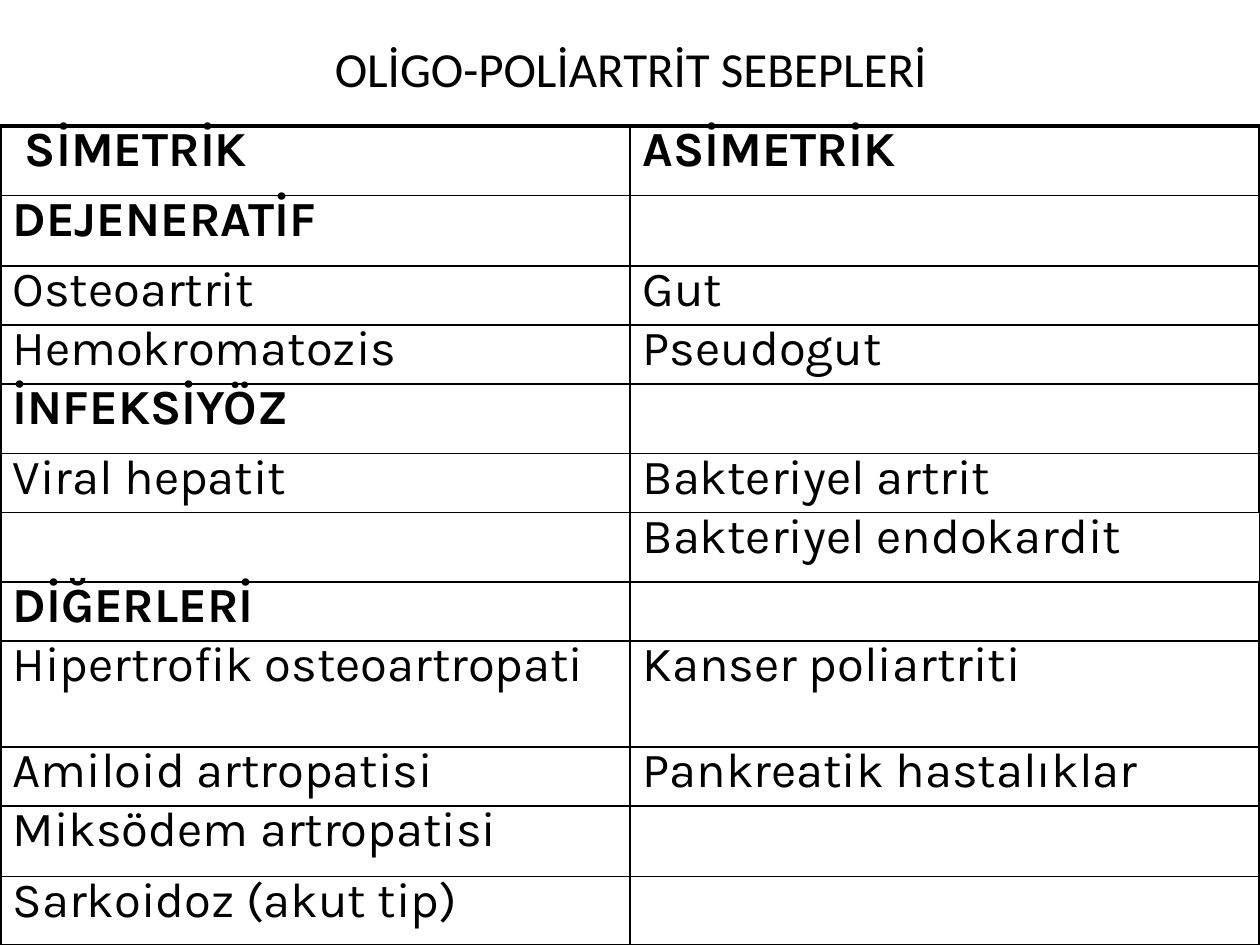
from dataclasses import dataclass

import lxml.etree
import pptx
import pptx.dml.color
import pptx.enum.text
import pptx.oxml.ns
import pptx.util

Inches = pptx.util.Inches


@dataclass(frozen=True)
class Theme:
    ink: str = "000000"
    paper: str = "FFFFFF"
    title_font: str = "Calibri"
    body_font: str = "Karla"
    text_size: float = 28
    thin: float = 1
    thick: float = 2.25
    line_spacing: float = 0.75
    space_before: str = "20000"


@dataclass(frozen=True)
class CauseRow:
    symmetric: str
    asymmetric: str
    height: float = 0.47
    heading: bool = False
    right_edge: float = Theme.thick


THEME = Theme()
ROWS = [
    CauseRow(" SİMETRİK", "ASİMETRİK", 0.55, heading=True),
    CauseRow("DEJENERATİF", "", 0.56, heading=True),
    CauseRow("Osteoartrit", "Gut"),
    CauseRow("Hemokromatozis", "Pseudogut"),
    CauseRow("İNFEKSİYÖZ", "", 0.55, heading=True),
    CauseRow("Viral hepatit", "Bakteriyel artrit"),
    CauseRow("", "Bakteriyel endokardit", 0.55, right_edge=THEME.thin),
    CauseRow("DİĞERLERİ", "", heading=True),
    CauseRow("Hipertrofik osteoartropati", "Kanser poliartriti", 0.84),
    CauseRow("Amiloid artropatisi", "Pankreatik hastalıklar"),
    CauseRow("Miksödem artropatisi", "", 0.56),
    CauseRow("Sarkoidoz (akut tip)", "", 0.55),
]


def color(value: str) -> pptx.dml.color.RGBColor:
    return pptx.dml.color.RGBColor.from_string(value)


def write_text(text_frame, text: str, *, font: str, bold: bool = False, align=None):
    paragraph = text_frame.paragraphs[0]
    paragraph.alignment = align
    run = paragraph.add_run()
    run.text = text
    run.font.name = font
    run.font.size = pptx.util.Pt(THEME.text_size)
    run.font.bold = bold
    run.font.color.rgb = color(THEME.ink)
    return paragraph


def set_percent_spacing(paragraph) -> None:
    paragraph.line_spacing = THEME.line_spacing
    paragraph.space_before = pptx.util.Pt(0)
    spacing = paragraph._p.pPr.find(pptx.oxml.ns.qn("a:spcBef"))
    spacing.remove(spacing[0])
    lxml.etree.SubElement(spacing, pptx.oxml.ns.qn("a:spcPct"), val=THEME.space_before)


def set_borders(cell, left: float, right: float, top: float, bottom: float) -> None:
    properties = cell._tc.get_or_add_tcPr()
    widths = {"a:lnL": left, "a:lnR": right, "a:lnT": top, "a:lnB": bottom}
    for position, (tag, width) in enumerate(widths.items()):
        line = properties.makeelement(
            pptx.oxml.ns.qn(tag), {"w": str(int(pptx.util.Pt(width)))}
        )
        fill = lxml.etree.SubElement(line, pptx.oxml.ns.qn("a:solidFill"))
        lxml.etree.SubElement(fill, pptx.oxml.ns.qn("a:srgbClr"), val=THEME.ink)
        properties.insert(position, line)


def format_title(slide, text: str) -> None:
    title = slide.shapes.title
    title.left, title.top = Inches(1.17), Inches(0.25)
    title.width, title.height = Inches(7.67), Inches(0.58)
    title.fill.solid()
    title.fill.fore_color.rgb = color(THEME.paper)
    title.text_frame.word_wrap = True
    title.text_frame.vertical_anchor = pptx.enum.text.MSO_ANCHOR.MIDDLE
    write_text(title.text_frame, text, font=THEME.title_font,
               align=pptx.enum.text.PP_ALIGN.CENTER)


def draw_table(slide, rows: list[CauseRow]) -> None:
    total_height = sum(row.height for row in rows)
    table = slide.shapes.add_table(
        len(rows), 2, 0, Inches(1), Inches(10), Inches(total_height)
    ).table
    table.first_row = False
    table.horz_banding = False
    for row_index, row in enumerate(rows):
        table.rows[row_index].height = Inches(row.height)
        top = THEME.thick if row_index == 0 else THEME.thin
        bottom = THEME.thick if row_index == len(rows) - 1 else THEME.thin
        sides = [(THEME.thick, THEME.thin), (THEME.thin, row.right_edge)]
        for column, text in enumerate((row.symmetric, row.asymmetric)):
            cell = table.cell(row_index, column)
            cell.fill.solid()
            cell.fill.fore_color.rgb = color(THEME.paper)
            set_borders(cell, *sides[column], top, bottom)
            if text:
                paragraph = write_text(cell.text_frame, text,
                                       font=THEME.body_font, bold=row.heading)
                set_percent_spacing(paragraph)


def main() -> None:
    presentation = pptx.Presentation()
    presentation.slide_width = Inches(10)
    presentation.slide_height = Inches(7.5)
    slide = presentation.slides.add_slide(presentation.slide_layouts[5])
    format_title(slide, "OLİGO-POLİARTRİT SEBEPLERİ")
    draw_table(slide, ROWS)
    presentation.save("out.pptx")


if __name__ == "__main__":
    main()
